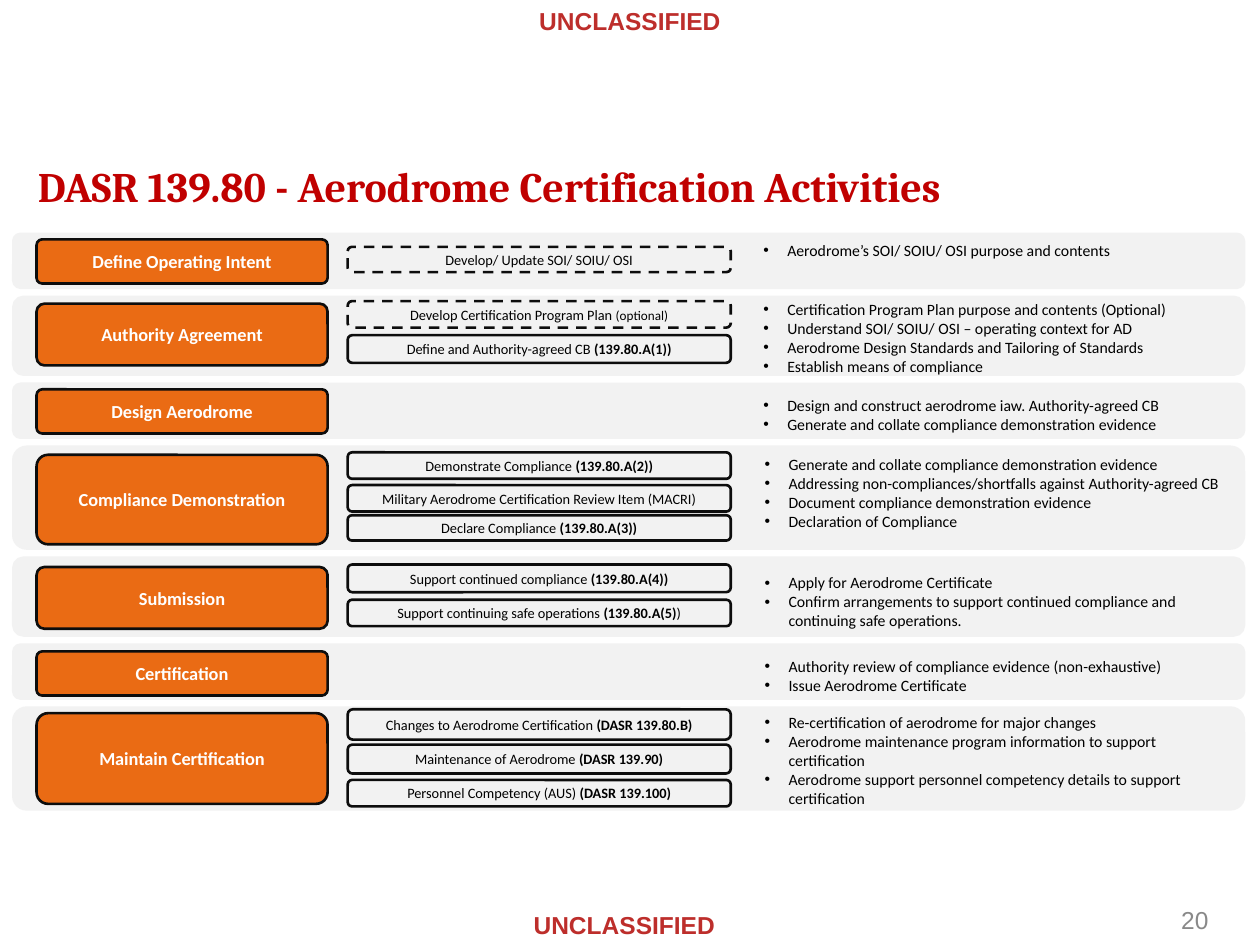
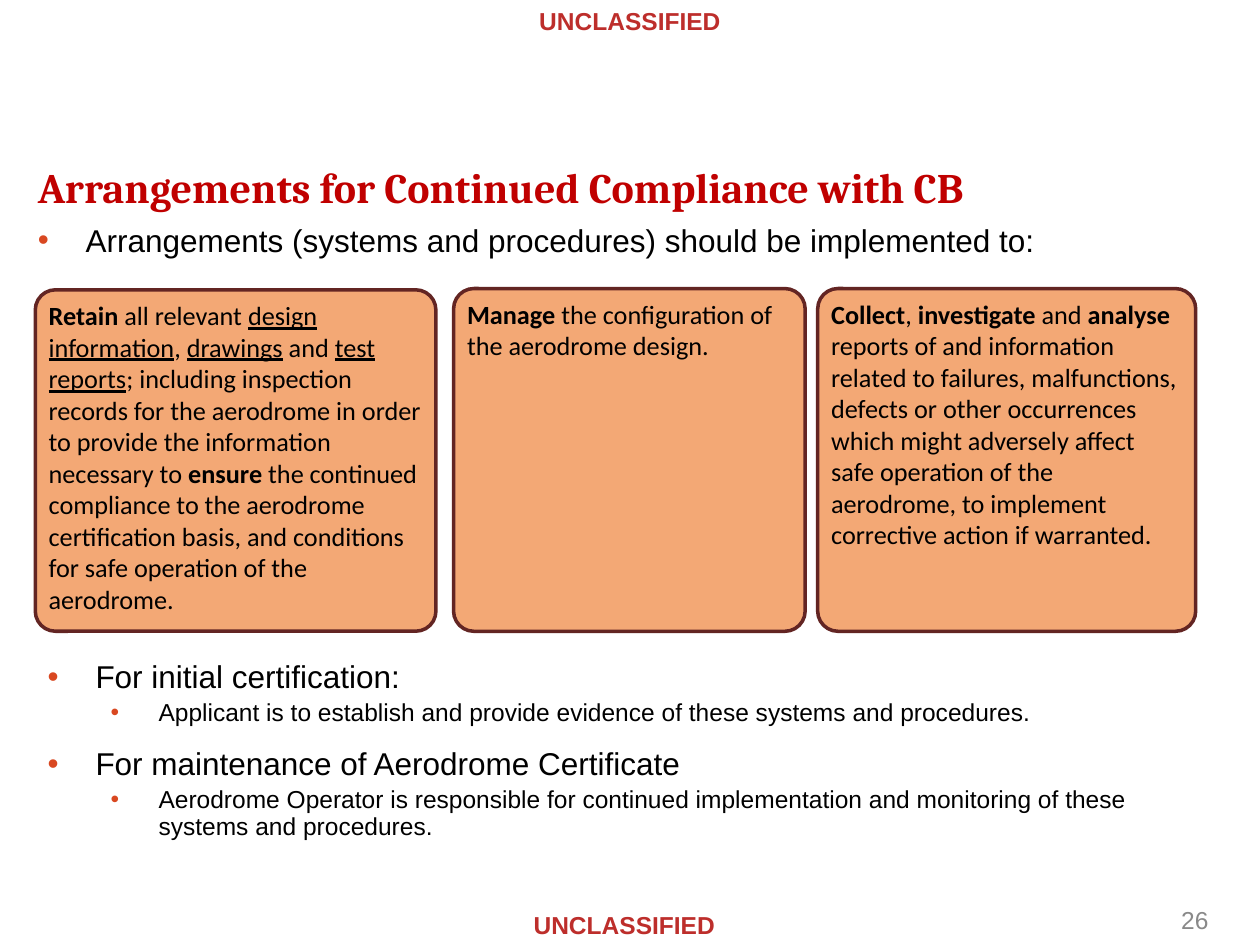
from lxml import etree
from pptx import Presentation
from pptx import util as u
from pptx.dml.color import RGBColor
from pptx.enum import dml, shapes, text
from pptx.oxml import ns

PX = 9144  # 100 px to the inch
COLORS = {
    "marking": "BD2E2B", "number": "898989", "title": "C00000",
    "row": "F2F2F2", "stage": "EA6B14", "outline": "0D0D0D",
    "card": "F3A875", "card_line": "632523", "bullet": "D94821",
    "text": "000000", "white": "FFFFFF",
}
EMPHASIS = {"b": {"bold": True}, "u": {"underline": True}, "s": {"size": u.Pt(7.5)}}
CENTER, LEFT, RIGHT = text.PP_ALIGN.CENTER, text.PP_ALIGN.LEFT, text.PP_ALIGN.RIGHT
TOP, MIDDLE = text.MSO_ANCHOR.TOP, text.MSO_ANCHOR.MIDDLE
DEFAULT_INSETS, TIGHT_INSETS = (10, 5), (6, 3)
ROW_TOP, ROW_GAP = 186, 8

# Row height, stage (label, top, height), activities (top, height, dashed, runs),
# topics (left, top, width, lines)
ROWS = [
    (42, ("Define Operating Intent", 190, 35),
     [(196, 20, True, ["Develop/ Update SOI/ SOIU/ OSI"])],
     (596, 186, 340, ["Aerodrome’s SOI/ SOIU/ OSI purpose and contents"])),
    (61, ("Authority Agreement", 241, 49),
     [(239, 21, True, ["Develop Certification Program Plan ", ("(optional)", "s")]),
      (266, 22, False, ["Define and Authority-agreed CB ", ("(139.80.A(1))", "b")])],
     (596, 233, 340, ["Certification Program Plan purpose and contents (Optional)",
                      "Understand SOI/ SOIU/ OSI – operating context for AD",
                      "Aerodrome Design Standards and Tailoring of Standards",
                      "Establish means of compliance"])),
    (42, ("Design Aerodrome", 309, 35), [],
     (596, 309, 340, ["Design and construct aerodrome iaw. Authority-agreed CB",
                      "Generate and collate compliance demonstration evidence"])),
    (80, ("Compliance Demonstration", 361, 71),
     [(359, 21, False, ["Demonstrate Compliance ", ("(139.80.A(2))", "b")]),
      (385, 21, False, ["Military Aerodrome Certification Review Item (MACRI)"]),
      (409, 20, False, ["Declare Compliance ", ("(139.80.A(3))", "b")])],
     (597, 356, 383, ["Generate and collate compliance demonstration evidence",
                      "Addressing non-compliances/shortfalls against Authority-agreed CB",
                      "Document compliance demonstration evidence",
                      "Declaration of Compliance"])),
    (61, ("Submission", 450, 49),
     [(448, 22, False, ["Support continued compliance ", ("(139.80.A(4))", "b")]),
      (476, 21, False, ["Support continuing safe operations ", ("(139.80.A(5)", "b"), ")"])],
     (597, 450, 364, ["Apply for Aerodrome Certificate",
                      "Confirm arrangements to support continued compliance and "
                      "continuing safe operations."])),
    (42, ("Certification", 517, 35), [],
     (597, 516, 364, ["Authority review of compliance evidence (non-exhaustive)",
                      "Issue Aerodrome Certificate"])),
    (80, ("Maintain Certification", 566, 72),
     [(563, 24, False, ["Changes to Aerodrome Certification ", ("(DASR 139.80.B)", "b")]),
      (591, 23, False, ["Maintenance of Aerodrome ", ("(DASR 139.90)", "b")]),
      (619, 21, False, ["Personnel Competency (AUS) ", ("(DASR 139.100)", "b")])],
     (597, 561, 364, ["Re-certification of aerodrome for major changes",
                      "Aerodrome maintenance program information to support certification",
                      "Aerodrome support personnel competency details to support "
                      "certification"])),
]

CARDS = [
    ((28, 230, 318, 271),
     [("Retain", "b"), " all relevant ", ("design information", "u"), ", ",
      ("drawings", "u"), " and ", ("test reports", "u"),
      "; including inspection records for the aerodrome in order to provide the "
      "information necessary to ", ("ensure", "b"),
      " the continued compliance to the aerodrome certification basis, and conditions "
      "for safe operation of the aerodrome."]),
    ((360, 229, 279, 272),
     [("Manage", "b"), " the configuration of the aerodrome design."]),
    ((649, 229, 300, 272),
     [("Collect", "b"), ", ", ("investigate", "b"), " and ", ("analyse", "b"),
      " reports of and information related to failures, malfunctions, defects or other "
      "occurrences which might adversely affect safe operation of the aerodrome, to "
      "implement corrective action if warranted."]),
]

# Level, space before, text
DUTIES = [
    (0, 0, "For initial certification:"),
    (1, 3, "Applicant is to establish and provide evidence of these systems and procedures."),
    (0, 12, "For maintenance of Aerodrome Certificate"),
    (1, 3, "Aerodrome Operator is responsible for continued implementation and monitoring "
           "of these systems and procedures."),
]


def rgb(name):
    return RGBColor.from_string(COLORS[name])


def set_all(target, values):
    for name, value in values.items():
        setattr(target, name, value)


def place(shape, box):
    set_all(shape, {name: value * PX
                    for name, value in zip(("left", "top", "width", "height"), box)})


def set_frame(shape, anchor=TOP, insets=DEFAULT_INSETS, wrap=True):
    side, end = (inset * PX for inset in insets)
    frame = shape.text_frame
    set_all(frame, {"word_wrap": wrap, "auto_size": text.MSO_AUTO_SIZE.NONE,
                    "vertical_anchor": anchor, "margin_left": side, "margin_right": side,
                    "margin_top": end, "margin_bottom": end})
    return frame


def write(paragraph, runs, font, size, color="text", bold=False, align=LEFT):
    """Fill a paragraph with plain strings and (string, emphasis) pairs."""
    paragraph.alignment = align
    for part in runs:
        words, emphasis = (part, "") if isinstance(part, str) else part
        run = paragraph.add_run()
        run.text = words
        set_all(run.font, {"name": font, "size": u.Pt(size), "bold": bold,
                           **EMPHASIS.get(emphasis, {})})
        run.font.color.rgb = rgb(color)


def add_bullet(paragraph, indent, hang, color):
    props = paragraph._p.get_or_add_pPr()
    props.set("marL", str(indent * PX))
    props.set("indent", str(-hang * PX))
    bullet_color = etree.SubElement(props, ns.qn("a:buClr"))
    etree.SubElement(bullet_color, ns.qn("a:srgbClr"), val=COLORS[color])
    etree.SubElement(props, ns.qn("a:buFont"), typeface="Arial")
    etree.SubElement(props, ns.qn("a:buChar"), char="•")


def add_paragraphs(frame, count):
    return [frame.paragraphs[0]] + [frame.add_paragraph() for _ in range(count - 1)]


def add_label(slide, box, words, size, color, bold=False, align=CENTER, anchor=TOP):
    label = slide.shapes.add_textbox(0, 0, 0, 0)
    place(label, box)
    frame = set_frame(label, anchor)
    write(frame.paragraphs[0], [words], "Arial", size, color, bold, align)
    return label


def add_panel(slide, box, fill, line, weight, corner=None, dashed=False):
    panel = slide.shapes.add_shape(shapes.MSO_SHAPE.ROUNDED_RECTANGLE, 0, 0, 0, 0)
    place(panel, box)
    panel.shadow.inherit = False
    panel.fill.solid()
    panel.fill.fore_color.rgb = rgb(fill)
    panel.line.color.rgb = rgb(line)
    panel.line.width = u.Pt(weight)
    if corner:
        panel.adjustments[0] = corner
    if dashed:
        panel.line.dash_style = dml.MSO_LINE.DASH
    return panel


def add_stage(slide, label, top, height):
    stage = add_panel(slide, (29, top, 231, height), "stage", "outline", 1.5, 0.127)
    frame = set_frame(stage, MIDDLE, TIGHT_INSETS)
    write(frame.paragraphs[0], [label], "Calibri", 10.5, "white", True, CENTER)


def add_activity(slide, top, height, dashed, runs):
    activity = add_panel(slide, (276, top, 304, height), "row", "outline", 1.5, dashed=dashed)
    frame = set_frame(activity, MIDDLE, TIGHT_INSETS)
    write(frame.paragraphs[0], runs, "Calibri", 8.2, align=CENTER)


def add_topics(slide, left, top, width, lines):
    topics = slide.shapes.add_textbox(0, 0, 0, 0)
    place(topics, (left, top, width, 10 + 15 * len(lines)))
    frame = set_frame(topics)
    for paragraph, line in zip(add_paragraphs(frame, len(lines)), lines):
        add_bullet(paragraph, 19, 19, "text")
        write(paragraph, [line], "Calibri", 9)


def add_card(slide, box, runs):
    card = add_panel(slide, box, "card", "card_line", 2, 0.059)
    frame = set_frame(card, TOP, TIGHT_INSETS)
    write(frame.paragraphs[0], runs, "Calibri", 15)


def add_duties(slide):
    duties = slide.shapes.add_textbox(0, 0, 0, 0)
    place(duties, (28, 520, 929, 162))
    frame = set_frame(duties)
    for paragraph, (level, before, words) in zip(add_paragraphs(frame, len(DUTIES)), DUTIES):
        set_all(paragraph, {"level": level, "line_spacing": 0.9, "space_before": u.Pt(before)})
        add_bullet(paragraph, 38 + 50 * level, 38, "bullet")
        write(paragraph, [words], "Arial", 14 if level else 18)


def start_slide(deck, layout, title, title_box, number):
    """Add a slide with its title, the two markings and the slide number."""
    slide = deck.slides.add_slide(deck.slide_layouts.get_by_name(layout))
    heading = slide.shapes.title
    place(heading, title_box)
    write(set_frame(heading).paragraphs[0], [title], "Cambria", 24, "title", True)
    add_label(slide, (0, 0, 1000, 33), "UNCLASSIFIED", 14, "marking", True)
    footer = add_label(slide, (413, 717, 165, 33), "UNCLASSIFIED", 14, "marking", True)
    footer.text_frame.word_wrap = False
    footer.fill.solid()
    footer.fill.fore_color.rgb = rgb("white")
    add_label(slide, (736, 710, 233, 40), number, 14, "number", align=RIGHT, anchor=MIDDLE)
    return slide


def build_activities(deck):
    slide = start_slide(deck, "Title Only", "DASR 139.80 - Aerodrome Certification Activities",
                        (20, 122, 942, 61), "20")
    top = ROW_TOP
    for height, stage, activities, topics in ROWS:
        add_panel(slide, (11, top, 976, height), "row", "row", 2, 0.127)
        add_stage(slide, *stage)
        for activity in activities:
            add_activity(slide, *activity)
        add_topics(slide, *topics)
        top += height + ROW_GAP


def build_arrangements(deck):
    slide = start_slide(deck, "Title and Content",
                        "Arrangements for Continued Compliance with CB",
                        (20, 123, 890, 69), "26")
    intro = slide.placeholders[1]
    place(intro, (20, 170, 929, 46))
    paragraph = set_frame(intro).paragraphs[0]
    paragraph.space_before = u.Pt(0)
    add_bullet(paragraph, 38, 38, "bullet")
    write(paragraph, ["Arrangements (systems and procedures) should be implemented to:"],
          "Arial", 18)
    for card in CARDS:
        add_card(slide, *card)
    add_duties(slide)


def main():
    deck = Presentation()
    deck.slide_width, deck.slide_height = 1000 * PX, 750 * PX
    build_activities(deck)
    build_arrangements(deck)
    deck.save("out.pptx")


if __name__ == "__main__":
    main()
